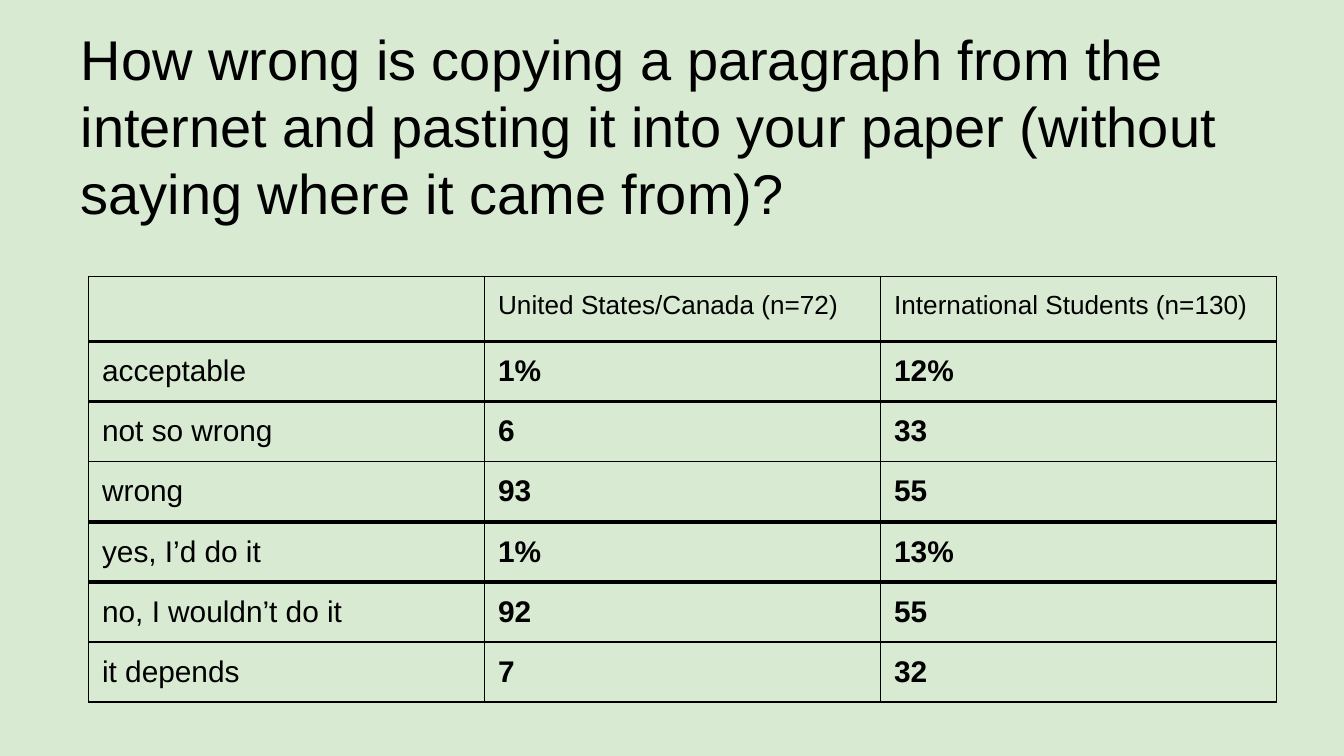
from lxml.etree import SubElement
from pptx import Presentation
from pptx.dml.color import RGBColor
from pptx.enum.text import MSO_ANCHOR, MSO_AUTO_SIZE, PP_ALIGN
from pptx.oxml.ns import qn
from pptx.util import Inches, Pt

COLORS = {"background": "D9EAD3", "ink": "000000"}
FONT = "Arial"
QUESTION = (
    "How wrong is copying a paragraph from the internet and pasting it "
    "into your paper (without saying where it came from)?"
)
ANSWERS = [
    ("", "United States/Canada (n=72)", "International Students (n=130)"),
    ("acceptable", "1%", "12%"),
    ("not so wrong", "6", "33"),
    ("wrong", "93", "55"),
    ("yes, I’d do it", "1%", "13%"),
    ("no, I wouldn’t do it", "92", "55"),
    ("it depends", "7", "32"),
]
THICK_EDGES = (1, 2, 4, 5)
THIN, THICK = 0.75, 2.25


def color(name):
    return RGBColor.from_string(COLORS[name])


def add_span(para, text, size, bold=False):
    span = para.add_run()
    span.text = text
    span.font.name = FONT
    span.font.size = Pt(size)
    span.font.bold = bold
    span.font.color.rgb = color("ink")


def set_empty_font(para, size):
    mark = SubElement(para._p, qn("a:endParaRPr"), sz=str(size * 100))
    SubElement(mark, qn("a:latin"), typeface=FONT)


def set_margins(target):
    target.margin_left = target.margin_right = Inches(0.1)
    target.margin_top = target.margin_bottom = Inches(0.1)


def set_border(cell, side, width):
    line = SubElement(cell._tc.get_or_add_tcPr(), qn(f"a:ln{side}"), w=str(Pt(width)))
    fill = SubElement(line, qn("a:solidFill"))
    SubElement(fill, qn("a:srgbClr"), val=COLORS["ink"])
    SubElement(line, qn("a:prstDash"), val="solid")


def add_title(page):
    box = page.shapes.title
    box.left, box.top = Inches(0.5), Inches(0.08)
    box.width, box.height = Inches(9), Inches(1.83)
    frame = box.text_frame
    frame.word_wrap = True
    frame.auto_size = MSO_AUTO_SIZE.NONE
    frame.vertical_anchor = MSO_ANCHOR.TOP
    set_margins(frame)
    para = frame.paragraphs[0]
    para.alignment = PP_ALIGN.LEFT
    para.line_spacing = 1.0
    add_span(para, QUESTION, 30)


def format_cell(cell, text, row, column):
    set_margins(cell)
    cell.vertical_anchor = MSO_ANCHOR.TOP
    para = cell.text_frame.paragraphs[0]
    if text:
        add_span(para, text, 14 if row == 0 else 16, row > 0 and column > 0)
    else:
        set_empty_font(para, 18)
    widths = {
        "L": THIN,
        "R": THIN,
        "T": THICK if row in THICK_EDGES else THIN,
        "B": THICK if row + 1 in THICK_EDGES else THIN,
    }
    for side, width in widths.items():
        set_border(cell, side, width)
    cell.fill.background()


def add_answers(page):
    row_count, column_count = len(ANSWERS), len(ANSWERS[0])
    frame = page.shapes.add_table(
        row_count, column_count, Inches(0.66), Inches(2.06),
        Inches(8.84), Inches(0.42 * row_count),
    )
    table = frame.table
    table.first_row = False
    table.horz_banding = False
    for row, texts in enumerate(ANSWERS):
        for column, text in enumerate(texts):
            format_cell(table.cell(row, column), text, row, column)


def main():
    deck = Presentation()
    deck.slide_width = Inches(10)
    deck.slide_height = Inches(10 * 9 / 16)
    page = deck.slides.add_slide(deck.slide_layouts[5])
    page.background.fill.solid()
    page.background.fill.fore_color.rgb = color("background")
    add_title(page)
    add_answers(page)
    deck.save("out.pptx")


if __name__ == "__main__":
    main()
